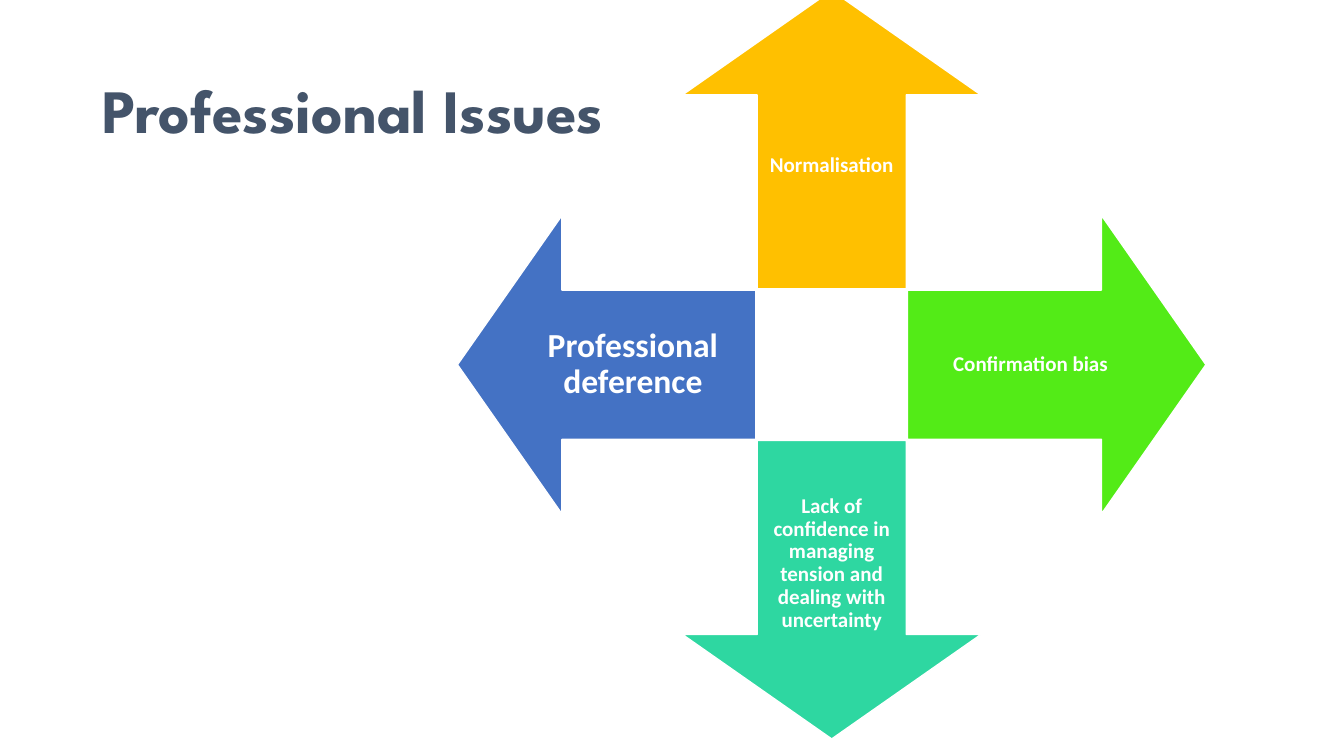
from pptx import Presentation
from pptx.dml.color import RGBColor
from pptx.enum.shapes import MSO_SHAPE as Preset
from pptx.enum.text import MSO_ANCHOR as Anchor, PP_ALIGN as Align
from pptx.util import Cm, Pt


def colour(hex_value):
    return RGBColor.from_string(hex_value)


class IssuesSlide:
    """Hold the slide, its style and the geometry of the arrow cross."""

    CENTRE = (20.96, 9.19)
    ARROW_SIZE, ARROW_REACH = 7.52, 5.67
    LABEL_LENGTH, LABEL_WIDTH, LABEL_REACH = 6.2, 3.76, 5.01
    WHITE, SLATE = "FFFFFF", "44546A"
    HEADING_FONT, LABEL_FONT = "League Spartan", "Calibri"

    def __init__(self, deck):
        self.slide = deck.slides.add_slide(deck.slide_layouts[5])
        self.cross = self.slide.shapes.add_group_shape()

    def box(self, direction, reach, width, height):
        x, y = (c + d * reach for c, d in zip(self.CENTRE, direction))
        return [Cm(v) for v in (x - width / 2, y - height / 2, width, height)]

    def set_text(self, shape, text, align, inset, font, size, hex_value):
        frame = shape.text_frame
        frame.text = text
        frame_format = {"word_wrap": True, "vertical_anchor": Anchor.MIDDLE}
        for side in ("left", "right", "top", "bottom"):
            frame_format[f"margin_{side}"] = Cm(inset)
        paragraph = frame.paragraphs[0]
        run_font = paragraph.runs[0].font
        formats = (
            (frame, frame_format),
            (paragraph, {"alignment": align, "line_spacing": 0.9}),
            (run_font, {"name": font, "size": Pt(size), "bold": True}),
        )
        for target, values in formats:
            for name, value in values.items():
                setattr(target, name, value)
        run_font.color.rgb = colour(hex_value)

    def heading(self, text):
        title = self.slide.shapes.title
        place = {"left": 2.33, "top": 1.01, "width": 29.21, "height": 3.68}
        for name, value in place.items():
            setattr(title, name, Cm(value))
        self.set_text(title, text, Align.LEFT, 0.25, self.HEADING_FONT, 44, self.SLATE)

    def arrow(self, direction, rotation, fill):
        size = self.ARROW_SIZE
        arrow = self.cross.shapes.add_shape(
            Preset.UP_ARROW, *self.box(direction, self.ARROW_REACH, size, size))
        arrow.adjustments[0], arrow.adjustments[1] = 0.5, 0.35
        arrow.rotation = rotation
        arrow.shadow.inherit = False
        arrow.fill.solid()
        arrow.fill.fore_color.rgb = colour(fill)
        arrow.line.color.rgb = colour(self.WHITE)
        arrow.line.width = Pt(1)

    def label(self, direction, text, size):
        extent = (self.LABEL_LENGTH, self.LABEL_WIDTH)
        if direction[0] == 0:
            extent = extent[::-1]
        label = self.cross.shapes.add_textbox(
            *self.box(direction, self.LABEL_REACH, *extent))
        self.set_text(label, text, Align.CENTER, size * 0.02, self.LABEL_FONT, size, self.WHITE)


def main():
    deck = Presentation()
    deck.slide_width, deck.slide_height = Cm(33.87), Cm(19.05)
    page = IssuesSlide(deck)
    page.heading("Professional Issues")
    issues = (
        ((0, -1), "FFC000", "Normalisation", 15),
        ((1, 0), "53EB17", "Confirmation bias", 15),
        ((0, 1), "2ED7A1",
         "Lack of confidence in managing tension and dealing with uncertainty", 15),
        ((-1, 0), "4472C4", "Professional deference", 24),
    )
    for turn, (direction, fill, issue, size) in enumerate(issues):
        page.arrow(direction, turn * 90, fill)
        page.label(direction, issue, size)
    deck.save("out.pptx")


if __name__ == "__main__":
    main()
